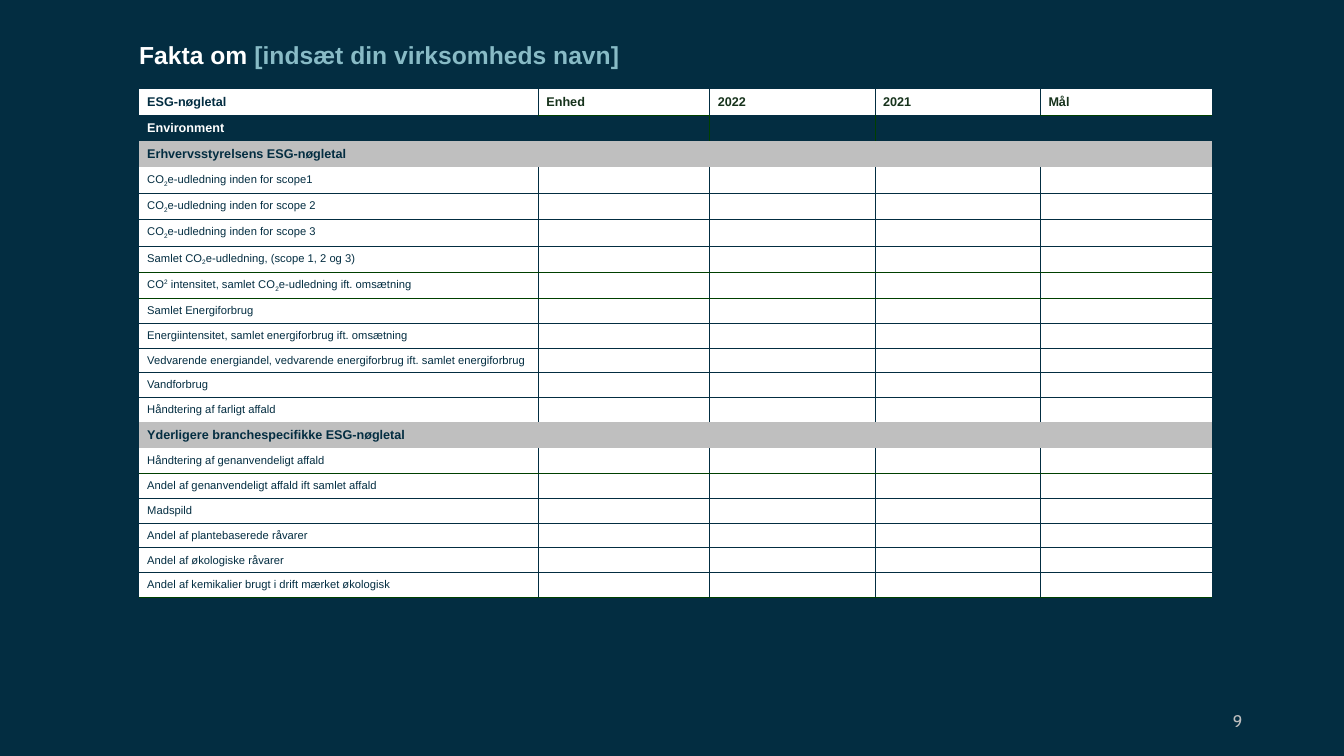
from itertools import groupby

from lxml import etree
from pptx import Presentation
from pptx.dml.color import RGBColor as RGB
from pptx.enum.text import MSO_ANCHOR as Anchor, PP_ALIGN as Align
from pptx.oxml.ns import qn
from pptx.util import Inches, Pt

NAVY = RGB(0x03, 0x2D, 0x41)
WHITE = RGB(0xFF, 0xFF, 0xFF)
GRAY = RGB(0xBF, 0xBF, 0xBF)
TEAL = RGB(0x88, 0xBB, 0xC6)
GREEN = RGB(0x00, 0x40, 0x00)
MOSS = RGB(0x16, 0x32, 0x1B)

NO_STYLE = "{2D5ABB26-0587-4C30-8999-92F81FD0307C}"
SHIFTS = {"₂": -25, "²": 30}  # baseline shift of a small 2, in percent

HEADS = ["ESG-nøgletal", "Enhed", "2022", "2021", "Mål"]
LABELS = [
    "Environment",
    "Erhvervsstyrelsens ESG-nøgletal",
    "CO₂e-udledning inden for scope1",
    "CO₂e-udledning inden for scope 2",
    "CO₂e-udledning inden for scope 3",
    "Samlet CO₂e-udledning, (scope 1, 2 og 3)",
    "CO² intensitet, samlet CO₂e-udledning ift. omsætning",
    "Samlet Energiforbrug",
    "Energiintensitet, samlet energiforbrug ift. omsætning",
    "Vedvarende energiandel, vedvarende energiforbrug ift. samlet energiforbrug",
    "Vandforbrug",
    "Håndtering af farligt affald",
    "Yderligere branchespecifikke ESG-nøgletal",
    "Håndtering af genanvendeligt affald",
    "Andel af genanvendeligt affald ift samlet affald",
    "Madspild",
    "Andel af plantebaserede råvarer",
    "Andel af økologiske råvarer",
    "Andel af kemikalier brugt i drift mærket økologisk",
]
ROWS = [HEADS] + [[label, "", "", "", ""] for label in LABELS]
WIDTHS = [3.96, 1.7, 1.64, 1.64, 1.7]
TOTAL, TALL = 5.05, 0.26  # table height; height of heading and CO₂ rows

HEAD, TOPIC, BANDS = 0, 1, (2, 13)
GREEN_ROWS = (6, 7, 14, 19)  # rows with a green line beneath


def write(para, text, size, color, font="Arial", bold=False):
    """Add text to a paragraph, with small twos as shifted runs."""
    for shift, chars in groupby(text, SHIFTS.get):
        run = para.add_run()
        run.text = "2" if shift else "".join(chars)
        run.font.size = Pt(size)
        run.font.name = font
        run.font.bold = bold
        run.font.color.rgb = color
        if shift:
            run.font._element.set("baseline", str(shift * 1000))


def add_box(slide, left, top, width, height, inset=None):
    box = slide.shapes.add_textbox(*map(Inches, (left, top, width, height)))
    frame = box.text_frame
    frame.word_wrap = True
    if inset is not None:
        frame.margin_left = frame.margin_right = Inches(inset)
        frame.margin_top = frame.margin_bottom = Inches(inset)
    return frame


def seam(row, col):
    """Colour of the line beneath a cell, or None."""
    if row == HEAD:
        return GREEN if col in (1, 4) else NAVY
    if row < 0 or row == TOPIC or row in BANDS or row + 1 in BANDS:
        return None
    return GREEN if row in GREEN_ROWS else NAVY


def side(row, col):
    """Colour of the line to the right of a cell, or None."""
    if row in BANDS or col in (-1, len(WIDTHS) - 1):
        return None
    return GREEN if row == TOPIC and col in (1, 2) else NAVY


def add_edge(cell, name, color):
    props = cell._tc.get_or_add_tcPr()
    line = etree.SubElement(props, qn("a:" + name), w=str(Pt(0.5)))
    if color is None:
        etree.SubElement(line, qn("a:noFill"))
    else:
        fill = etree.SubElement(line, qn("a:solidFill"))
        etree.SubElement(fill, qn("a:srgbClr"), val=str(color))


def fill_cell(cell, row, col, text):
    # Borders
    add_edge(cell, "lnL", side(row, col - 1))
    add_edge(cell, "lnR", side(row, col))
    add_edge(cell, "lnT", seam(row - 1, col))
    add_edge(cell, "lnB", seam(row, col))

    # Fill and margins
    cell.fill.solid()
    cell.fill.fore_color.rgb = (
        NAVY if row == TOPIC else GRAY if row in BANDS else WHITE)
    cell.vertical_anchor = Anchor.MIDDLE
    cell.margin_left = cell.margin_right = Inches(0.08)
    cell.margin_top = cell.margin_bottom = Inches(0.04)

    # Text
    para = cell.text_frame.paragraphs[0]
    if not text:
        etree.SubElement(para._p, qn("a:endParaRPr"), sz="800")
        return
    strong = row in (HEAD, TOPIC, *BANDS)
    color = WHITE if row == TOPIC else MOSS if col else NAVY
    write(para, text, 9 if strong else 8, color, bold=strong)


def add_grid(slide):
    frame = slide.shapes.add_table(
        len(ROWS), len(WIDTHS), Inches(1.38), Inches(0.88),
        Inches(sum(WIDTHS)), Inches(TOTAL))
    table = frame.table
    table.first_row = table.horz_banding = False
    table._tbl.tblPr.find(qn("a:tableStyleId")).text = NO_STYLE

    for column, width in zip(table.columns, WIDTHS):
        column.width = Inches(width)

    tall = [row in (HEAD, TOPIC, *BANDS) or "₂" in texts[0]
            for row, texts in enumerate(ROWS)]
    low = (TOTAL - TALL * sum(tall)) / tall.count(False)
    for row, texts in enumerate(ROWS):
        table.rows[row].height = Inches(TALL if tall[row] else low)
        for col, text in enumerate(texts):
            fill_cell(table.cell(row, col), row, col, text)
    table.cell(BANDS[0], 1).merge(table.cell(BANDS[0], 3))


def main():
    deck = Presentation()
    deck.slide_width, deck.slide_height = Inches(13.33), Inches(7.5)
    slide = deck.slides.add_slide(deck.slide_layouts[6])
    slide.background.fill.solid()
    slide.background.fill.fore_color.rgb = NAVY

    # Page number
    frame = add_box(slide, 9.42, 6.95, 3, 0.4)
    frame.vertical_anchor = Anchor.MIDDLE
    para = frame.paragraphs[0]
    para.alignment = Align.RIGHT
    write(para, "9", 12, GRAY, font="Cabin")

    # Title
    para = add_box(slide, 1.38, 0.43, 10.64, 0.35, inset=0).paragraphs[0]
    para.line_spacing = 0.9
    write(para, "Fakta om ", 17.6, WHITE, bold=True)
    write(para, "[indsæt din virksomheds navn]", 17.6, TEAL, bold=True)

    # Key figures
    add_grid(slide)

    deck.save("out.pptx")


if __name__ == "__main__":
    main()
